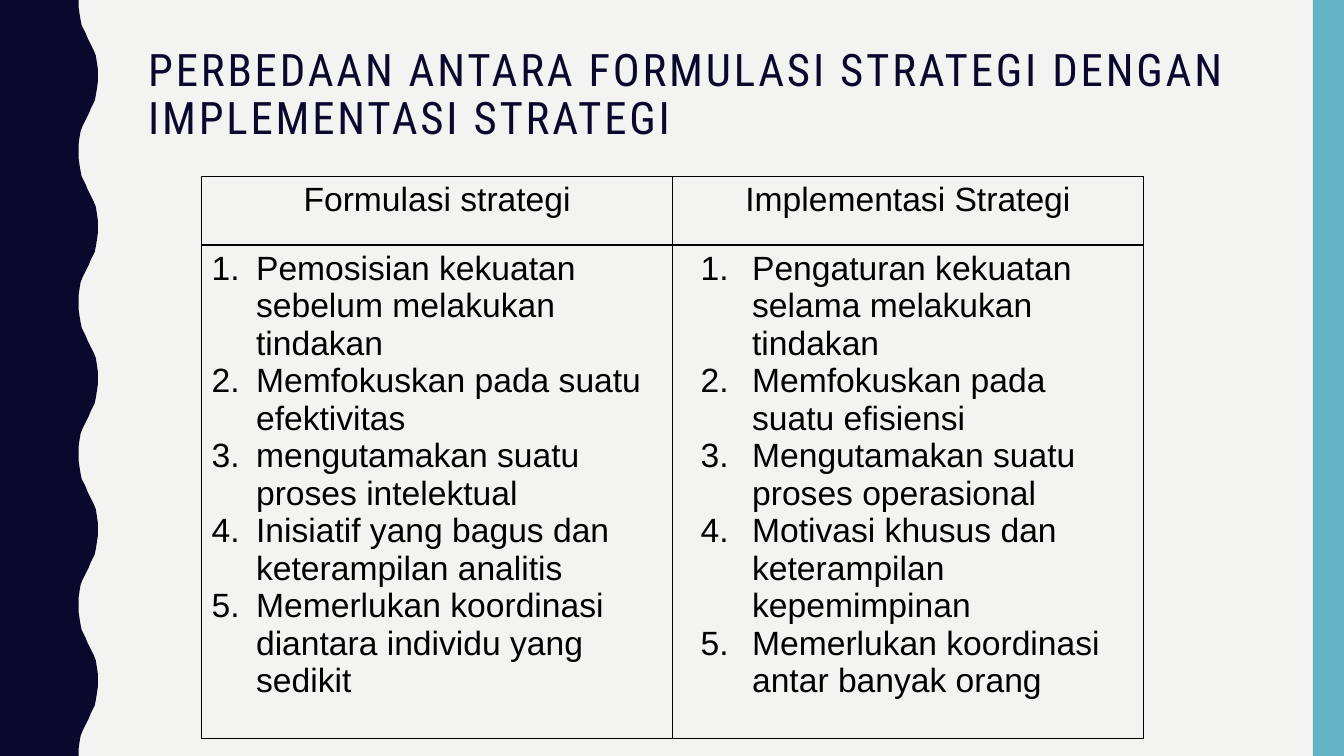
from lxml import etree
from pptx import Presentation
from pptx.dml.color import RGBColor
from pptx.enum.shapes import MSO_SHAPE
from pptx.enum.text import MSO_ANCHOR, MSO_AUTO_SIZE, PP_ALIGN
from pptx.oxml.ns import qn
from pptx.util import Pt

PX = 9144  # 100 px to the inch
WIDE, HIGH = 1333, 750
RECT = MSO_SHAPE.RECTANGLE
LEFT, MID = PP_ALIGN.LEFT, PP_ALIGN.CENTER
TOP = MSO_ANCHOR.TOP
FIXED = MSO_AUTO_SIZE.NONE

NAVY, TEAL, PAPER, BLACK = "0B082E", "62B4C6", "F3F3F2", "000000"
HEAD = {"name": "Roboto Condensed", "size": Pt(32), "bold": False}
BODY = {"name": "Arial", "size": Pt(24), "bold": False}

TITLE = "PERBEDAAN ANTARA FORMULASI STRATEGI DENGAN IMPLEMENTASI STRATEGI"
# Each column: heading, list level, left margin, hanging indent, items
COLUMNS = [
    ("Formulasi strategi", 0, 44, 44, [
        "Pemosisian kekuatan sebelum melakukan tindakan",
        "Memfokuskan pada suatu efektivitas",
        "mengutamakan suatu proses intelektual",
        "Inisiatif yang bagus dan keterampilan analitis",
        "Memerlukan koordinasi diantara individu yang sedikit",
    ]),
    ("Implementasi Strategi", 1, 69, 51, [
        "Pengaturan kekuatan selama melakukan tindakan",
        "Memfokuskan pada suatu efisiensi",
        "Mengutamakan suatu proses operasional",
        "Motivasi khusus dan keterampilan kepemimpinan",
        "Memerlukan koordinasi antar banyak orang",
    ]),
]
ROWS = [68, 490]
COL = 467

# One half wave, as (x, y); every second half is mirrored
HALF = 75
CURVE = [(78, 0), (78, 7), (79, 14), (80, 20), (81, 25), (83, 29), (85, 33),
         (87, 38), (89, 42), (91, 46), (93, 50), (95, 55), (96, 61),
         (97, 68), (97, 75)]
MIRROR = 78 + 97


def color(text):
    return RGBColor.from_string(text)


def box(*sides):
    """Turn px lengths into EMU."""
    return [side * PX for side in sides]


def paint(shape, fill):
    shape.shadow.inherit = False
    shape.fill.solid()
    shape.fill.fore_color.rgb = color(fill)
    shape.line.fill.background()


def add_wave(slide):
    edge = [(MIRROR - x if half % 2 else x, half * HALF + y)
            for half in range(HIGH // HALF) for x, y in CURVE]
    form = slide.shapes.build_freeform(0, 0, scale=PX)
    form.add_line_segments(edge + [(0, HIGH)], close=True)
    paint(form.convert_to_shape(), NAVY)


def add_text(para, text, style, ink, align):
    para.alignment = align
    run = para.add_run()
    run.text = text
    for name, value in style.items():
        setattr(run.font, name, value)
    run.font.color.rgb = color(ink)
    return run


def add_title(slide):
    title = slide.shapes.title
    title.left, title.top, title.width, title.height = box(137, 42, 1113, 163)
    frame = title.text_frame
    form = {"word_wrap": True, "auto_size": FIXED, "vertical_anchor": TOP}
    for name, value in form.items():
        setattr(frame, name, value)
    para = frame.paragraphs[0]
    para.line_spacing = 0.9
    run = add_text(para, TITLE, HEAD, NAVY, LEFT)
    run.font._element.set("spc", "200")


def number(para, margin, hang):
    """Make the paragraph an item of a numbered list."""
    props = para._p.get_or_add_pPr()
    props.set("marL", str(margin * PX))
    props.set("indent", str(-hang * PX))
    etree.SubElement(props, qn("a:buFont"), typeface="+mj-lt")
    etree.SubElement(props, qn("a:buAutoNum"), type="arabicPeriod")


def frame_cell(cell):
    """Clear the cell's fill and draw a thin line on each side."""
    cell.fill.background()
    props = cell._tc.get_or_add_tcPr()
    for place, side in enumerate(("lnL", "lnR", "lnT", "lnB")):
        line = etree.Element(qn("a:" + side), w=str(Pt(1)))
        fill = etree.SubElement(line, qn("a:solidFill"))
        etree.SubElement(fill, qn("a:srgbClr"), val=BLACK)
        props.insert(place, line)


def add_table(slide):
    area = box(200, 175, COL * len(COLUMNS), sum(ROWS))
    table = slide.shapes.add_table(len(ROWS), len(COLUMNS), *area).table
    table.first_row = table.horz_banding = False
    for row, high in zip(table.rows, ROWS):
        row.height = high * PX
    for col, (head, level, margin, hang, items) in enumerate(COLUMNS):
        table.columns[col].width = COL * PX
        top, body = table.cell(0, col), table.cell(1, col)
        frame_cell(top)
        frame_cell(body)
        add_text(top.text_frame.paragraphs[0], head, BODY, BLACK, MID)
        frame = body.text_frame
        for place, item in enumerate(items):
            para = frame.add_paragraph() if place else frame.paragraphs[0]
            para.level = level
            add_text(para, item, BODY, BLACK, LEFT)
            number(para, margin, hang)


def main():
    deck = Presentation()
    deck.slide_width, deck.slide_height = box(WIDE, HIGH)
    slide = deck.slides.add_slide(deck.slide_layouts.get_by_name("Title Only"))
    back = slide.background.fill
    back.solid()
    back.fore_color.rgb = color(PAPER)
    add_wave(slide)
    paint(slide.shapes.add_shape(RECT, *box(1302, 0, 31, HIGH)), TEAL)
    add_title(slide)
    add_table(slide)
    deck.save("out.pptx")


if __name__ == "__main__":
    main()
